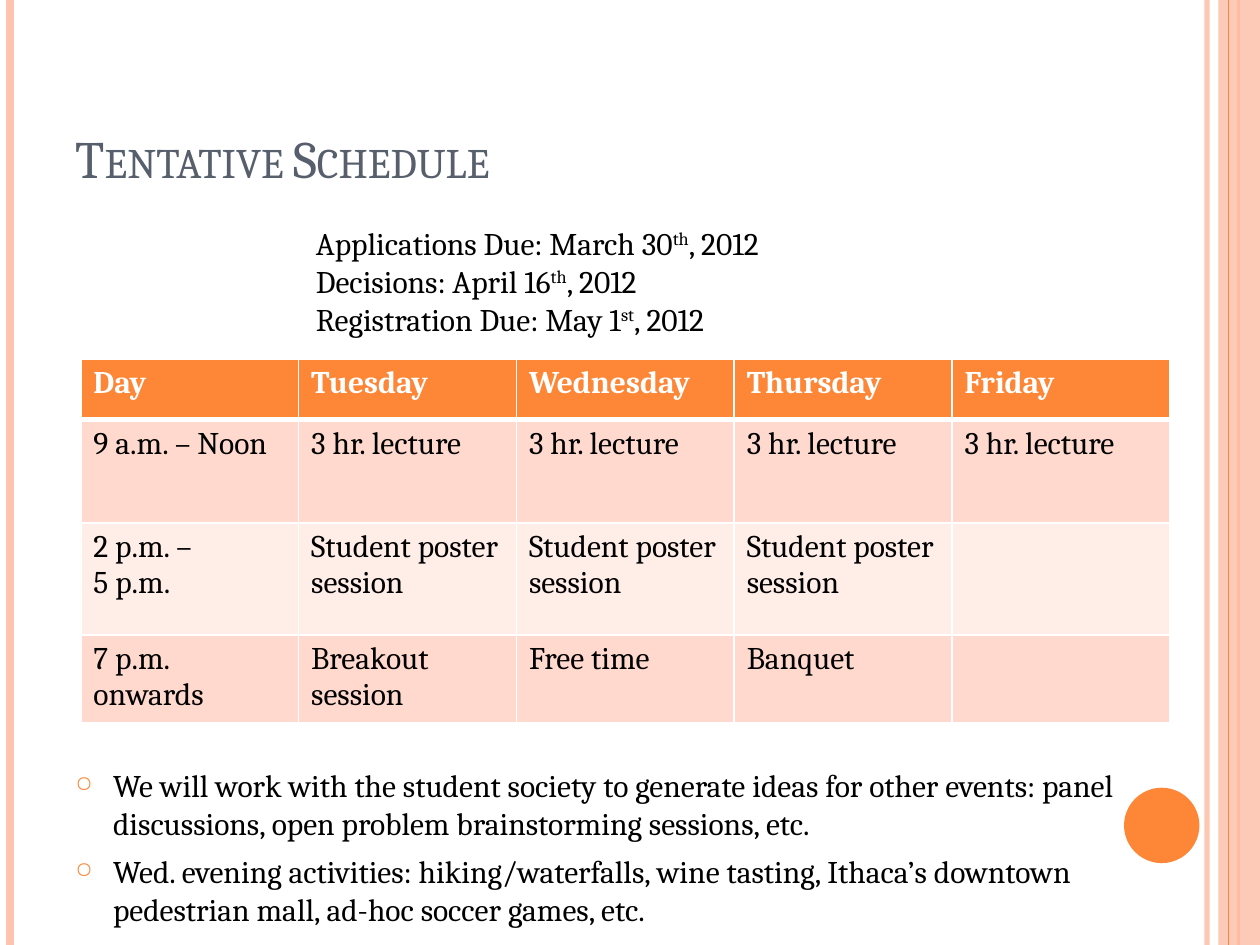
"""Build the tentative schedule slide with its timetable."""
from lxml.etree import SubElement
from pptx import Presentation
from pptx.dml.color import RGBColor
from pptx.enum.shapes import MSO_CONNECTOR, MSO_SHAPE
from pptx.enum.text import MSO_ANCHOR as ANCHOR
from pptx.oxml.ns import qn
from pptx.util import Cm, Pt

COLORS = {
    "orange": "FE8637", "peach": "FEC3AE", "slate": "575F6D",
    "white": "FFFFFF", "black": "000000",
    "odd_row": "FFD9CE", "even_row": "FFEDE8",
}
FONT = "Cambria"
SLIDE_W, SLIDE_H = 25.4, 19.05

RULES = [(24.33, "peach", 3, 93), (0.2, "peach", 4.5, 100), (24.97, "orange", 1.5, 100)]
INNER_RULE = (24.77, "orange", 0.75, 100)
DEADLINES = [
    ("Applications Due: March 30", "th", ", 2012"),
    ("Decisions: April 16", "th", ", 2012"),
    ("Registration Due: May 1", "st", ", 2012"),
]
SCHEDULE = [
    ["Day", "Tuesday", "Wednesday", "Thursday", "Friday"],
    ["9 a.m. – Noon"] + ["3 hr. lecture"] * 4,
    ["2 p.m. –\n5 p.m."] + ["Student poster session"] * 3 + [""],
    ["7 p.m. onwards", "Breakout session", "Free time", "Banquet", ""],
]
ROW_HEIGHTS = [1.22, 2.08, 2.26, 1.7]
COL_WIDTH = 4.39
NOTES = [
    "We will work with the student society to generate ideas for other events: "
    "panel discussions, open problem brainstorming sessions, etc.",
    "Wed. evening activities: hiking/waterfalls, wine tasting, Ithaca’s downtown "
    "pedestrian mall, ad-hoc soccer games, etc.",
]


def rgb(name):
    return RGBColor.from_string(COLORS[name])


def set_alpha(element, percent):
    color = element.find(".//" + qn("a:srgbClr"))
    SubElement(color, qn("a:alpha"), val=str(percent * 1000))


def add_rule(slide, x, color, width, alpha):
    line = slide.shapes.add_connector(
        MSO_CONNECTOR.STRAIGHT, Cm(x), Cm(0), Cm(x), Cm(SLIDE_H))
    line.line.color.rgb = rgb(color)
    line.line.width = Pt(width)
    sp_pr = line._element.spPr
    if alpha < 100:
        set_alpha(sp_pr, alpha)
    SubElement(sp_pr, qn("a:effectLst"))


def add_block(slide, kind, box, color):
    sp = slide.shapes.add_shape(kind, *map(Cm, box))
    sp.shadow.inherit = False
    sp.fill.solid()
    sp.fill.fore_color.rgb = rgb(color)
    sp.line.fill.background()
    return sp


def add_run(p, text, size=18, color="black", bold=False):
    r = p.add_run()
    r.text = text
    r.font.name = FONT
    r.font.size = Pt(size)
    r.font.bold = bold
    r.font.color.rgb = rgb(color)
    return r


def add_text(slide, box):
    tf = slide.shapes.add_textbox(*map(Cm, box)).text_frame
    tf.word_wrap = True
    return tf


def paragraphs(tf, items):
    for i, item in enumerate(items):
        yield (tf.add_paragraph() if i else tf.paragraphs[0]), item


def add_title(slide, text):
    tf = add_text(slide, (1.27, 0.76, 20.75, 3.18))
    tf.vertical_anchor = ANCHOR.BOTTOM
    r = add_run(tf.paragraphs[0], text, 30, "slate")
    r.font._element.set("cap", "small")


def add_deadlines(slide):
    tf = add_text(slide, (6.12, 4.39, 12.7, 2.57))
    for p, (date, ordinal, year) in paragraphs(tf, DEADLINES):
        add_run(p, date)
        add_run(p, ordinal).font._element.set("baseline", "30000")
        add_run(p, year)


def add_notes_list(slide):
    tf = add_text(slide, (1.27, 15.32, 23.32, 3.73))
    for p, text in paragraphs(tf, NOTES):
        p.space_before = Pt(6)
        p_pr = p._p.get_or_add_pPr()
        p_pr.set("marL", str(Cm(0.76)))
        p_pr.set("indent", str(-Cm(0.76)))
        SubElement(SubElement(p_pr, qn("a:buClr")), qn("a:srgbClr"), val=COLORS["orange"])
        SubElement(p_pr, qn("a:buSzPct"), val="70000")
        SubElement(p_pr, qn("a:buChar"), char="○")
        add_run(p, text)


def set_borders(cell, widths):
    for side, width in widths.items():
        ln = SubElement(cell._tc.get_or_add_tcPr(), qn("a:ln" + side), w=str(Pt(width)))
        SubElement(SubElement(ln, qn("a:solidFill")), qn("a:srgbClr"), val=COLORS["white"])


def add_schedule(slide):
    rows, cols = len(SCHEDULE), len(SCHEDULE[0])
    table = slide.shapes.add_table(
        rows, cols, Cm(1.63), Cm(7.24), Cm(COL_WIDTH * cols), Cm(sum(ROW_HEIGHTS))).table
    for col in table.columns:
        col.width = Cm(COL_WIDTH)
    for i, texts in enumerate(SCHEDULE):
        table.rows[i].height = Cm(ROW_HEIGHTS[i])
        header = i == 0
        fill = "orange" if header else "odd_row" if i % 2 else "even_row"
        for j, text in enumerate(texts):
            cell = table.cell(i, j)
            set_borders(cell, {"L": 1, "R": 1, "T": 3 if i == 1 else 1, "B": 3 if header else 1})
            cell.fill.solid()
            cell.fill.fore_color.rgb = rgb(fill)
            for p, line in paragraphs(cell.text_frame, text.split("\n") if text else []):
                add_run(p, line, color="white" if header else "black", bold=header)


def main():
    prs = Presentation()
    prs.slide_width, prs.slide_height = Cm(SLIDE_W), Cm(SLIDE_H)
    slide = prs.slides.add_slide(prs.slide_layouts[6])
    for rule in RULES:
        add_rule(slide, *rule)
    band = add_block(slide, MSO_SHAPE.RECTANGLE, (24.56, 0, 0.84, SLIDE_H), "peach")
    set_alpha(band._element.spPr, 87)
    add_rule(slide, *INNER_RULE)
    add_block(slide, MSO_SHAPE.OVAL, (22.66, 15.88, 1.52, 1.52), "orange")
    add_title(slide, "Tentative Schedule")
    add_schedule(slide)
    add_deadlines(slide)
    add_notes_list(slide)
    prs.save("out.pptx")


if __name__ == "__main__":
    main()
